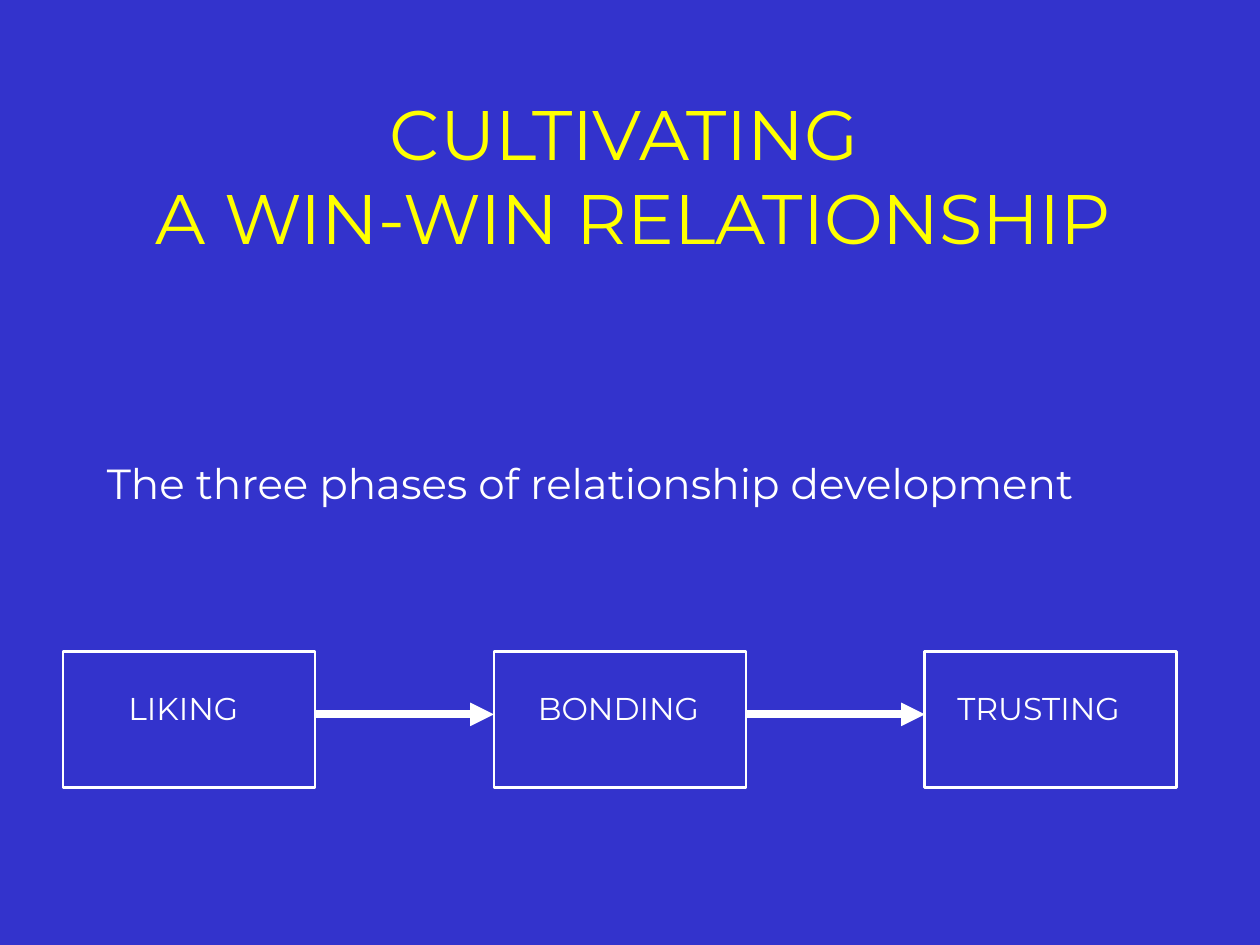
from pptx import Presentation
from pptx.dml.color import RGBColor
from pptx.enum.shapes import MSO_CONNECTOR, MSO_SHAPE
from pptx.enum.text import PP_ALIGN
from pptx.oxml.ns import qn
from pptx.util import Inches, Pt
from lxml import etree

STRAIGHT = MSO_CONNECTOR.STRAIGHT
RECTANGLE = MSO_SHAPE.RECTANGLE
LEFT, CENTER = PP_ALIGN.LEFT, PP_ALIGN.CENTER

COLORS = {"background": "3333CC", "title": "FFFF00", "foreground": "FFFFFF"}
FONT = "Montserrat"

# Label, left edge of its text, width of its text
PHASES = [("LIKING", 0.92, 1.58), ("BONDING", 4.17, 1.67), ("TRUSTING", 7.5, 1.75)]
BOX_LEFT, BOX_TOP, BOX_WIDTH, BOX_HEIGHT = 0.5, 5.17, 2, 1.08
BOX_STEP = 3.42
ARROW_Y, LABEL_TOP = 5.67, 5.42


def rgb(name):
    return RGBColor.from_string(COLORS[name])


def write_text(frame, text, *, size, color="foreground", align=LEFT, wrap=True):
    """Fill the frame with one paragraph per line of text."""
    frame.word_wrap = wrap
    for index, line in enumerate(text.split("\n")):
        paragraph = frame.paragraphs[0] if index == 0 else frame.add_paragraph()
        paragraph.alignment = align
        run = paragraph.add_run()
        run.text = line
        run.font.name = FONT
        run.font.size = Pt(size)
        run.font.color.rgb = rgb(color)


class SlideBuilder:
    def __init__(self, slide):
        self.shapes = slide.shapes
        slide.background.fill.solid()
        slide.background.fill.fore_color.rgb = rgb("background")

    def text(self, text, left, top, width, height, **style):
        box = self.shapes.add_textbox(
            Inches(left), Inches(top), Inches(width), Inches(height))
        write_text(box.text_frame, text, **style)

    def box(self, left, top, width, height):
        outline = self.shapes.add_shape(
            RECTANGLE, Inches(left), Inches(top), Inches(width), Inches(height))
        outline.shadow.inherit = False
        outline.fill.background()
        outline.line.color.rgb = rgb("foreground")
        outline.line.width = Pt(1.5)

    def arrow(self, start, end, y):
        arrow = self.shapes.add_connector(
            STRAIGHT, Inches(start), Inches(y), Inches(end), Inches(y))
        arrow.line.color.rgb = rgb("foreground")
        arrow.line.width = Pt(4.5)
        etree.SubElement(arrow.line._get_or_add_ln(), qn("a:tailEnd"), type="triangle")
        etree.SubElement(arrow._element.spPr, qn("a:effectLst"))


def main():
    presentation = Presentation()
    presentation.slide_width = Inches(10)
    presentation.slide_height = Inches(7.5)
    builder = SlideBuilder(
        presentation.slides.add_slide(presentation.slide_layouts[6]))

    builder.text("CULTIVATING\n A WIN-WIN RELATIONSHIP", 0.83, 0.67, 8.25, 1.54,
                 size=40, color="title", align=CENTER, wrap=False)
    builder.text("The three phases of relationship development",
                 0.75, 3.58, 8.83, 0.5, size=24)

    for index, (label, label_left, label_width) in enumerate(PHASES):
        left = BOX_LEFT + index * BOX_STEP
        builder.box(left, BOX_TOP, BOX_WIDTH, BOX_HEIGHT)
        if index > 0:
            builder.arrow(left - BOX_STEP + BOX_WIDTH, left, ARROW_Y)
        builder.text(label, label_left, LABEL_TOP, label_width, 0.4, size=18)

    presentation.save("out.pptx")


if __name__ == "__main__":
    main()
